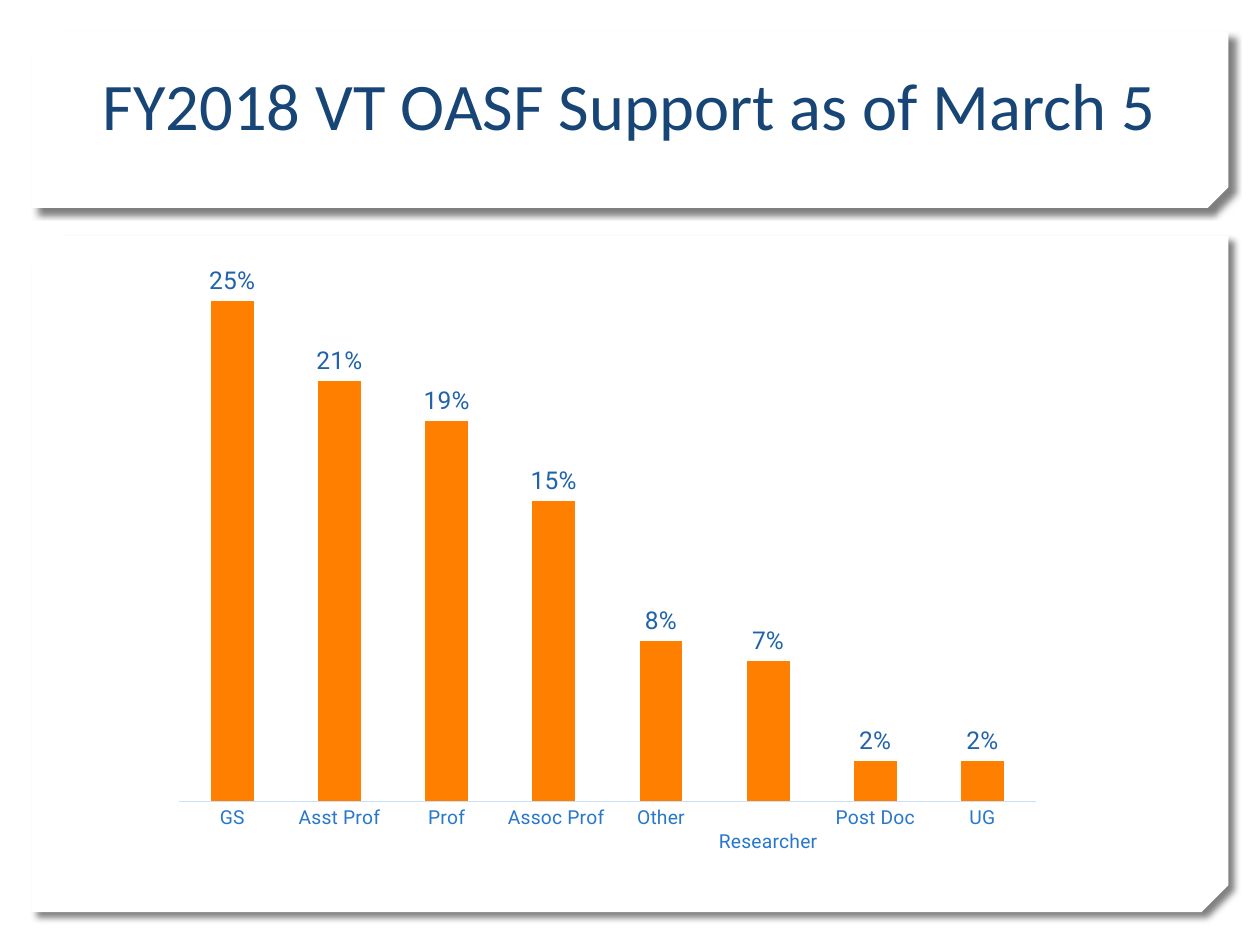
"""Build the FY2018 VT OASF support slide with its column chart."""
import lxml.etree
import pptx
import pptx.chart.data
import pptx.dml.color
import pptx.enum.chart
import pptx.enum.shapes
import pptx.enum.text
import pptx.oxml
import pptx.oxml.ns
import pptx.util

Pt = pptx.util.Pt
RGBColor = pptx.dml.color.RGBColor
WHITE = RGBColor(0xFF, 0xFF, 0xFF)
TITLE_BLUE = RGBColor(0x17, 0x45, 0x76)
CHART_BLUE = RGBColor(0x10, 0x31, 0x54)
CATEGORY_BLUE = RGBColor(0x27, 0x77, 0xCD)
LABEL_BLUE = RGBColor(0x20, 0x63, 0xAA)
AXIS_BLUE = RGBColor(0xCB, 0xE0, 0xF5)
ORANGE = RGBColor(0xFF, 0x7F, 0x01)

SHADOW = (
    f'<a:effectLst {pptx.oxml.ns.nsdecls("a")}>'
    f'<a:outerShdw blurRad="{Pt(4)}" dist="{Pt(5)}" dir="2700000" algn="tl" rotWithShape="0">'
    '<a:srgbClr val="000000"><a:alpha val="50000"/></a:srgbClr>'
    '</a:outerShdw></a:effectLst>'
)
SUPPORT = {
    "GS": 0.25,
    "Asst Prof": 0.21,
    "Prof": 0.19,
    "Assoc Prof": 0.15,
    "Other": 0.08,
    "Researcher": 0.07,
    "Post Doc": 0.02,
    "UG": 0.02,
}


def set_font(font, name, size, color):
    font.name = name
    font.size = Pt(size)
    font.color.rgb = color


presentation = pptx.Presentation()
presentation.slide_width = Pt(720)
presentation.slide_height = Pt(540)
slide = presentation.slides.add_slide(presentation.slide_layouts[6])

for top, height, snip in ((134.64, 386.64, 0.04), (18, 100.8, 0.117)):
    panel = slide.shapes.add_shape(
        pptx.enum.shapes.MSO_SHAPE.SNIP_2_DIAG_RECTANGLE, Pt(18), Pt(top), Pt(684), Pt(height)
    )
    panel.adjustments[0] = snip
    panel.adjustments[1] = 0
    panel.fill.solid()
    panel.fill.fore_color.rgb = WHITE
    panel.line.fill.background()
    panel._element.spPr.append(pptx.oxml.parse_xml(SHADOW))

title = slide.shapes.add_textbox(Pt(36), Pt(21.6), Pt(648), Pt(64))
title.text_frame.word_wrap = True
title.text_frame.vertical_anchor = pptx.enum.text.MSO_ANCHOR.BOTTOM
title.text_frame.text = "FY2018 VT OASF Support as of March 5"
paragraph = title.text_frame.paragraphs[0]
paragraph.alignment = pptx.enum.text.PP_ALIGN.CENTER
set_font(paragraph.runs[0].font, "Calibri", 38, TITLE_BLUE)

chart_data = pptx.chart.data.CategoryChartData(number_format="0%")
chart_data.categories = [f" {position} " for position in SUPPORT]
chart_data.add_series("Series 1", SUPPORT.values())
chart = slide.shapes.add_chart(
    pptx.enum.chart.XL_CHART_TYPE.COLUMN_CLUSTERED,
    Pt(91.44), Pt(110.16), Pt(511.92), Pt(380.16), chart_data,
).chart
chart.has_legend = False
chart.has_title = False
set_font(chart.font, "Calibri", 10, CHART_BLUE)

category_axis = chart.category_axis
category_axis.major_tick_mark = pptx.enum.chart.XL_TICK_MARK.NONE
category_axis.format.line.color.rgb = AXIS_BLUE
category_axis.format.line.width = Pt(0.75)
set_font(category_axis.tick_labels.font, "Roboto", 11, CATEGORY_BLUE)

value_axis = chart.value_axis
value_axis.minimum_scale = 0
value_axis.maximum_scale = 0.3
value_axis.has_major_gridlines = False
value_axis.visible = False

plot = chart.plots[0]
plot.gap_width = 150
plot.overlap = -25
plot.vary_by_categories = False
series = plot.series[0]
series.format.fill.solid()
series.format.fill.fore_color.rgb = ORANGE
labels = series.data_labels
labels.show_value = True
labels.number_format = "0%"
labels.number_format_is_linked = False
labels.position = pptx.enum.chart.XL_LABEL_POSITION.OUTSIDE_END
set_font(labels.font, "Roboto", 14, LABEL_BLUE)

plot_area = chart._chartSpace.chart.plotArea
for old_layout in plot_area.findall(pptx.oxml.ns.qn("c:layout")):
    plot_area.remove(old_layout)
layout = lxml.etree.Element(pptx.oxml.ns.qn("c:layout"))
manual = lxml.etree.SubElement(layout, pptx.oxml.ns.qn("c:manualLayout"))
for tag, value in (
    ("layoutTarget", "inner"), ("xMode", "edge"), ("yMode", "edge"),
    ("x", "0.021"), ("y", "0.013"), ("w", "0.957"), ("h", "0.902"),
):
    lxml.etree.SubElement(manual, pptx.oxml.ns.qn(f"c:{tag}"), val=value)
plot_area.insert(0, layout)

presentation.save("out.pptx")
